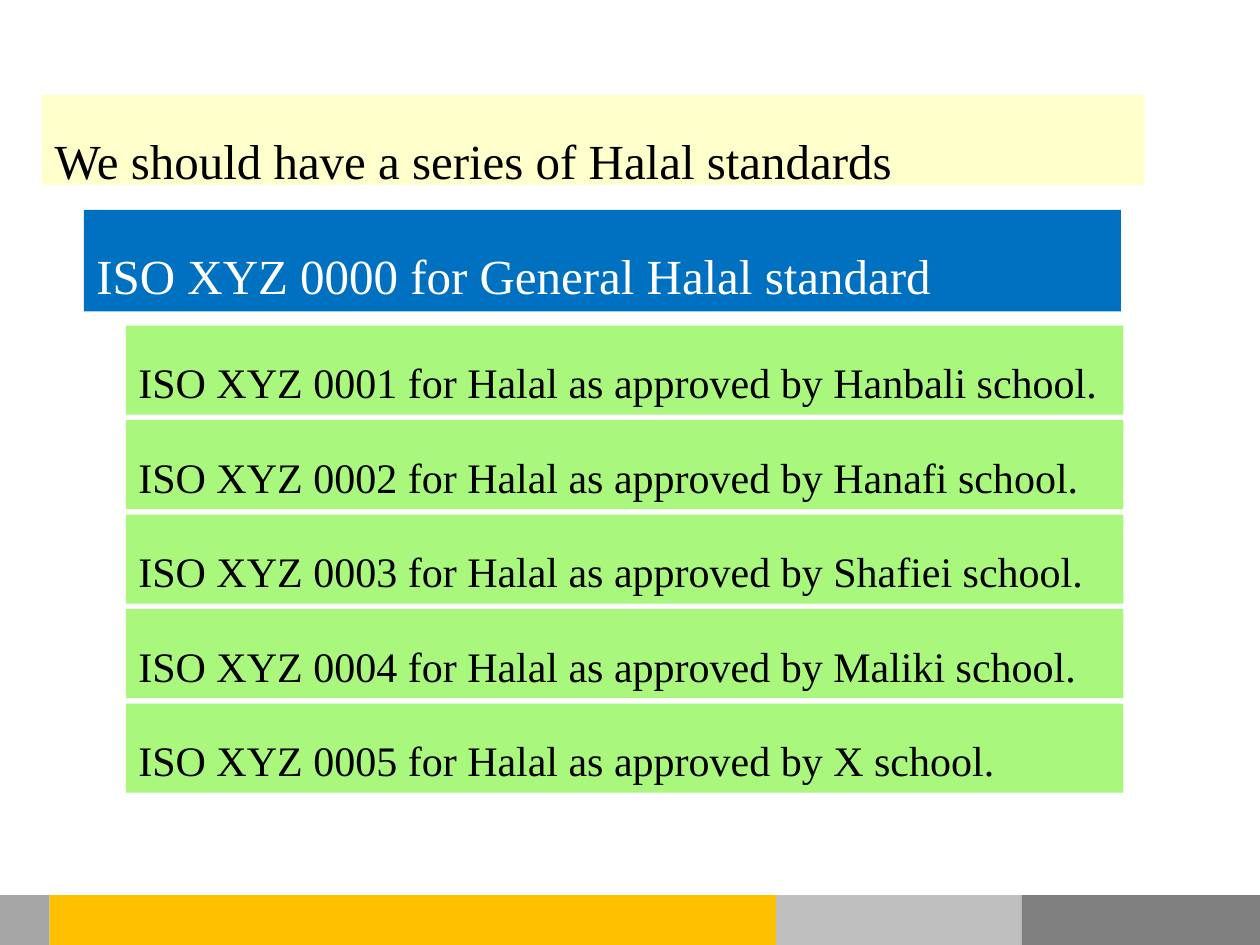
from pptx import Presentation
from pptx.dml.color import RGBColor
from pptx.enum.shapes import MSO_SHAPE as Shape
from pptx.enum.text import MSO_ANCHOR as Anchor, MSO_AUTO_SIZE as AutoSize, PP_ALIGN as Align
from pptx.util import Pt

BLACK = RGBColor(0x00, 0x00, 0x00)
WHITE = RGBColor(0xFF, 0xFF, 0xFF)
CREAM = RGBColor(0xFF, 0xFF, 0xCC)
BLUE = RGBColor(0x00, 0x70, 0xC0)
GREEN = RGBColor(0xA9, 0xF7, 0x7D)
AMBER = RGBColor(0xFF, 0xC0, 0x00)
LIGHT_GREY = RGBColor(0xBF, 0xBF, 0xBF)
MID_GREY = RGBColor(0xA6, 0xA6, 0xA6)
DARK_GREY = RGBColor(0x80, 0x80, 0x80)

SLIDE_WIDTH, SLIDE_HEIGHT = 720, 540
SCHOOLS = ["Hanbali", "Hanafi", "Shafiei", "Maliki", "X"]


class StandardsSlide:
    """Holds the text style and the slide being drawn."""

    font = "Times New Roman"
    line_spacing = 1.5

    def __init__(self, slide):
        self.slide = slide

    def set_text(self, holder, text, size, color):
        frame = holder.text_frame
        frame.word_wrap = True
        frame.auto_size = AutoSize.NONE
        frame.vertical_anchor = Anchor.TOP
        paragraph = frame.paragraphs[0]
        paragraph.alignment = Align.JUSTIFY
        paragraph.line_spacing = self.line_spacing
        paragraph.space_before = Pt(0)
        run = paragraph.add_run()
        run.text = text
        run.font.name = self.font
        run.font.size = Pt(size)
        run.font.color.rgb = color

    def set_fill(self, holder, color):
        holder.fill.solid()
        holder.fill.fore_color.rgb = color

    def title(self, text, left, top, width, height, fill):
        heading = self.slide.shapes.title
        heading.left, heading.top = Pt(left), Pt(top)
        heading.width, heading.height = Pt(width), Pt(height)
        self.set_fill(heading, fill)
        self.set_text(heading, text, 28, BLACK)

    def label(self, text, left, top, width, height, fill, size, color):
        box = self.slide.shapes.add_textbox(Pt(left), Pt(top), Pt(width), Pt(height))
        self.set_fill(box, fill)
        self.set_text(box, text, size, color)

    def block(self, left, top, width, height, fill):
        block = self.slide.shapes.add_shape(
            Shape.RECTANGLE, Pt(left), Pt(top), Pt(width), Pt(height))
        block.shadow.inherit = False
        block.line.fill.background()
        self.set_fill(block, fill)


def main():
    deck = Presentation()
    deck.slide_width, deck.slide_height = Pt(SLIDE_WIDTH), Pt(SLIDE_HEIGHT)
    title_only = deck.slide_layouts[5]
    page = StandardsSlide(deck.slides.add_slide(title_only))

    # Heading and general standard
    page.title("We should have a series of Halal standards", 24, 54, 630, 51.6, CREAM)
    page.label("ISO XYZ 0000 for General Halal standard",
               48, 120, 592.5, 58, BLUE, 28, WHITE)

    # One standard per school
    first_top, pitch = 186, 54
    for index, school in enumerate(SCHOOLS):
        page.label(f"ISO XYZ {index + 1:04d} for Halal as approved by {school} school.",
                   72, first_top + index * pitch, 570, 51, GREEN, 24, BLACK)

    # Footer band, each block running from its left edge to the next
    band_height = 28.4
    band = [(0, MID_GREY), (28.4, AMBER), (443.5, LIGHT_GREY), (584, DARK_GREY)]
    right_edges = [left for left, _ in band[1:]] + [SLIDE_WIDTH]
    for (left, color), right in zip(band, right_edges):
        page.block(left, SLIDE_HEIGHT - band_height, right - left, band_height, color)

    deck.save("out.pptx")


if __name__ == "__main__":
    main()
